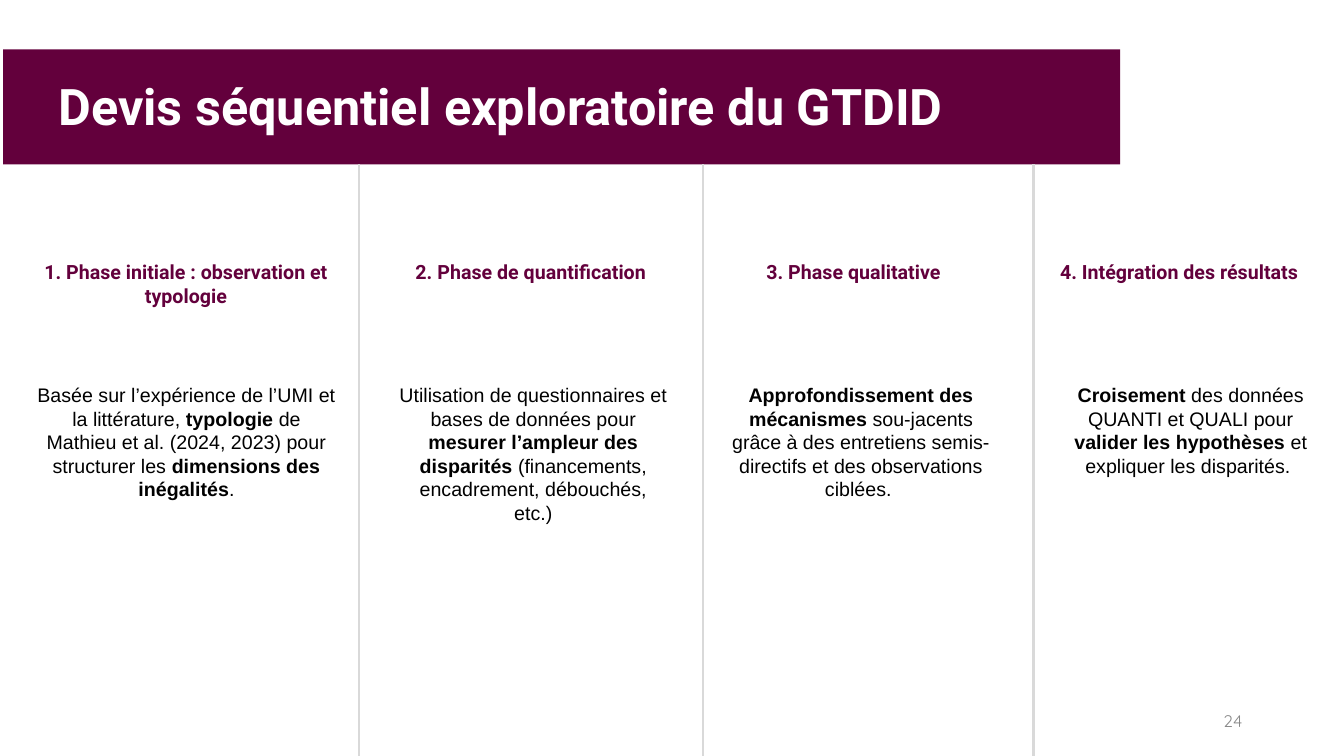
"""Build the slide on the four phases of the GTDID sequential design."""
from lxml import etree
from pptx import Presentation
from pptx.dml.color import RGBColor
from pptx.enum.shapes import MSO_CONNECTOR, MSO_SHAPE
from pptx.enum.text import MSO_ANCHOR, PP_ALIGN
from pptx.oxml.ns import qn
from pptx.util import Inches, Pt

LEFT, CENTER, RIGHT = PP_ALIGN.LEFT, PP_ALIGN.CENTER, PP_ALIGN.RIGHT
TOP, MIDDLE = MSO_ANCHOR.TOP, MSO_ANCHOR.MIDDLE
RECTANGLE, STRAIGHT = MSO_SHAPE.RECTANGLE, MSO_CONNECTOR.STRAIGHT

TITLE = "Devis séquentiel exploratoire du GTDID"
PAGE = "24"
# Each phase: heading, (left, width), body with **bold** parts, (left, width).
PHASES = [
    ("1. Phase initiale : observation et typologie", (0.14, 3.41),
     "Basée sur l’expérience de l’UMI et la littérature, **typologie **de Mathieu et al. "
     "(2024, 2023) pour structurer les **dimensions des inégalités**.", (0.27, 3.16)),
    ("2. Phase de quantification", (3.56, 3.41),
     "Utilisation de questionnaires et bases de données pour **mesurer l’ampleur des "
     "disparités **(financements, encadrement, débouchés, etc.)", (3.86, 2.86)),
    ("3. Phase qualitative", (6.97, 2.99),
     "**Approfondissement des mécanismes **sou-jacents grâce à des entretiens "
     "semis-directifs et des observations ciblées. ", (7.12, 2.84)),
    ("4. Intégration des résultats", (10.2, 2.99),
     "**Croisement** des données QUANTI et QUALI pour **valider les hypothèses **et "
     "expliquer les disparités. ", (10.39, 2.84)),
]
COLORS = {"plum": "63003C", "white": "FFFFFF", "black": "000000",
          "rule": "D9D9D9", "page": "888888"}
WIDTH, HEIGHT = 13.33, 7.5
BANNER = (0.03, 0.49, 11.08, 1.14)
BANNER_BOTTOM = BANNER[1] + BANNER[3]
DIVIDERS = (3.56, 6.97, 10.25)
HEADING_TOP, HEADING_HEIGHT = 2.53, 0.71
BODY_TOP, BODY_HEIGHT = 3.75, 1.92


def rgb(name):
    """Return the named colour."""
    return RGBColor.from_string(COLORS[name])


def add_text(slide, text, box, font="Arial", size=14, color="black", bold=False,
             align=CENTER, anchor=TOP):
    """Add a wrapped text box; parts between ** marks switch weight."""
    tf = slide.shapes.add_textbox(*map(Inches, box)).text_frame
    tf.word_wrap = True
    tf.vertical_anchor = anchor
    p = tf.paragraphs[0]
    p.alignment = align
    for i, part in enumerate(text.split("**")):
        if part:
            r = p.add_run()
            r.text = part
            r.font.name, r.font.size = font, Pt(size)
            r.font.bold = bold != (i % 2 == 1)
            r.font.color.rgb = rgb(color)


def add_divider(slide, x):
    """Add a vertical rule from the banner to the foot of the slide."""
    ends = map(Inches, (x, HEIGHT, x, BANNER_BOTTOM))
    line = slide.shapes.add_connector(STRAIGHT, *ends)
    line.line.color.rgb = rgb("rule")
    line.line.width = Pt(1.5)
    etree.SubElement(line._element.spPr, qn("a:effectLst"))


def main():
    """Compose and save the slide."""
    prs = Presentation()
    prs.slide_width, prs.slide_height = Inches(WIDTH), Inches(HEIGHT)
    s = prs.slides.add_slide(prs.slide_layouts[6])

    sp = s.shapes.add_shape(RECTANGLE, *map(Inches, BANNER))
    sp.shadow.inherit = False
    sp.fill.solid()
    sp.fill.fore_color.rgb = rgb("plum")
    sp.line.fill.background()
    add_text(s, TITLE, (0.48, 0.7, 10.27, 0.71), font="Roboto", size=36,
             color="white", bold=True, align=LEFT)

    for x in DIVIDERS:
        add_divider(s, x)
    for heading, (hx, hw), body, (bx, bw) in PHASES:
        add_text(s, heading, (hx, HEADING_TOP, hw, HEADING_HEIGHT), font="Roboto",
                 color="plum", bold=True)
        add_text(s, body, (bx, BODY_TOP, bw, BODY_HEIGHT))

    add_text(s, PAGE, (9.42, 6.95, 3, 0.4), font="Quicksand", size=12,
             color="page", align=RIGHT, anchor=MIDDLE)
    prs.save("out.pptx")


if __name__ == "__main__":
    main()
